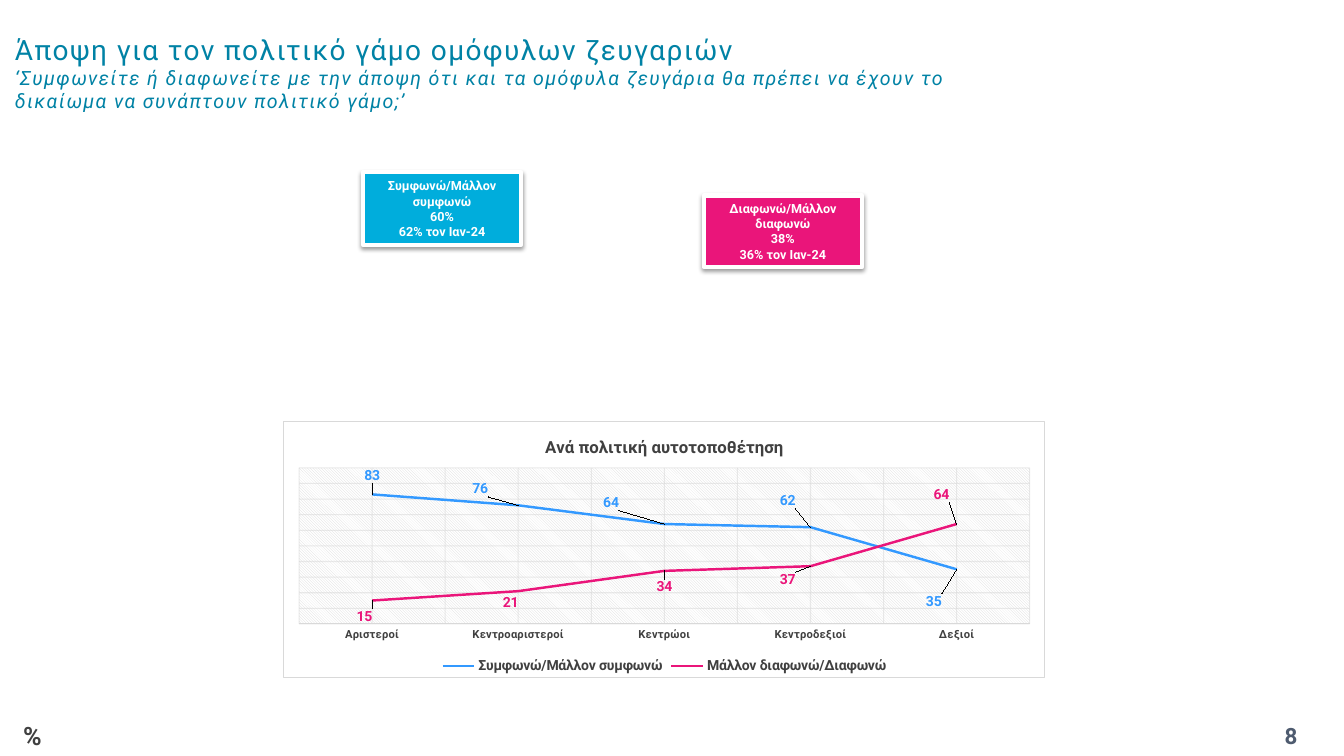
from copy import deepcopy

from lxml import etree
from pptx import Presentation
from pptx.chart.data import CategoryChartData
from pptx.dml.color import RGBColor
from pptx.enum.chart import XL_CHART_TYPE as ChartType
from pptx.enum.chart import XL_LABEL_POSITION as LabelPosition
from pptx.enum.chart import XL_LEGEND_POSITION as LegendPosition
from pptx.enum.chart import XL_MARKER_STYLE as Marker
from pptx.enum.chart import XL_TICK_MARK as TickMark
from pptx.enum.dml import MSO_PATTERN as Pattern
from pptx.enum.shapes import MSO_SHAPE as Shape
from pptx.enum.text import MSO_ANCHOR as Anchor
from pptx.enum.text import MSO_AUTO_SIZE as AutoSize
from pptx.enum.text import PP_ALIGN as Align
from pptx.oxml import parse_xml
from pptx.oxml.ns import nsdecls, qn
from pptx.util import Inches, Pt

FONT = "Roboto"
COLORS = {
    "title": "0082A5", "number": "4E5B6F", "dark": "404040", "gray": "808080",
    "grid": "D9D9D9", "white": "FFFFFF", "black": "000000",
    "cyan": "00ADDC", "blue": "3399FF", "pink": "EA157A",
}
CATEGORIES = ["Αριστεροί", "Κεντροαριστεροί", "Κεντρώοι", "Κεντροδεξιοί", "Δεξιοί"]
# Name, values, colour, label side, label shifts as fractions of the chart
SERIES = [
    ("Συμφωνώ/Μάλλον συμφωνώ", [83, 76, 64, 62, 35], "blue", LabelPosition.BELOW,
     [(0, -0.12), (-0.05, -0.11), (-0.07, -0.13), (-0.03, -0.15), (-0.03, 0.08)]),
    ("Μάλλον διαφωνώ/Διαφωνώ", [15, 21, 34, 37, 64], "pink", LabelPosition.ABOVE,
     [(-0.01, 0.11), (-0.01, 0.09), (0, 0.11), (-0.03, 0.1), (-0.02, -0.07)]),
]


def rgb(name):
    return RGBColor.from_string(COLORS[name])


def style_font(font, size, color, bold=False, italic=False):
    font.name, font.size = FONT, Pt(size)
    font.bold, font.italic = bold, italic
    font.color.rgb = rgb(color)


def add_span(para, text, size, color, bold=False, italic=False, spacing=0):
    span = para.add_run()
    span.text = text
    style_font(span.font, size, color, bold, italic)
    if spacing:
        span.font._element.set("spc", str(spacing * 100))
    return span


def add_text(page, place, anchor=Anchor.TOP, align=Align.LEFT):
    """Add a text box and return its first paragraph."""
    box = page.shapes.add_textbox(*map(Inches, place))
    box.text_frame.word_wrap = True
    box.text_frame.vertical_anchor = anchor
    para = box.text_frame.paragraphs[0]
    para.alignment = align
    return para


def add_card(page, place, color, lines):
    card = page.shapes.add_shape(Shape.RECTANGLE, *map(Inches, place))
    card.fill.solid()
    card.fill.fore_color.rgb = rgb(color)
    card.line.color.rgb = rgb("white")
    card.line.width = Pt(3)
    # Soft shadow straight below
    card.shadow.inherit = False
    effects = card._element.spPr.find(qn("a:effectLst"))
    effects.append(parse_xml(
        f'<a:outerShdw {nsdecls("a")} blurRad="{Pt(3.1)}" dist="{Pt(1.6)}" dir="5400000">'
        f'<a:srgbClr val="{COLORS["black"]}"><a:alpha val="38000"/></a:srgbClr>'
        '</a:outerShdw>'))
    frame = card.text_frame
    frame.word_wrap = True
    frame.auto_size = AutoSize.SHAPE_TO_FIT_TEXT
    frame.vertical_anchor = Anchor.MIDDLE
    for index, line in enumerate(lines):
        para = frame.add_paragraph() if index else frame.paragraphs[0]
        para.alignment = Align.CENTER
        add_span(para, line, 9, "white", bold=True)


def manual_layout(**values):
    """Build a chart layout element from positions and modes, in schema order."""
    layout = etree.Element(qn("c:layout"))
    manual = etree.SubElement(layout, qn("c:manualLayout"))
    for tag, value in values.items():
        etree.SubElement(manual, qn(f"c:{tag}")).set("val", str(value))
    return layout


def style_grid(gridlines):
    line = gridlines.format.line
    line.color.rgb = rgb("grid")
    line.width = Pt(0.75)
    color = gridlines.format._element if hasattr(gridlines.format, "_element") else None
    color = gridlines._xAx.find(qn("c:majorGridlines")) if color is None else color
    for tint in color.iter(qn("a:srgbClr")):
        etree.SubElement(tint, qn("a:alpha")).set("val", "54000")


def style_axes(chart):
    category, value = chart.category_axis, chart.value_axis
    category.major_tick_mark = category.minor_tick_mark = TickMark.NONE
    style_font(category.tick_labels.font, 8, "dark", bold=True)
    category.format.line.color.rgb = rgb("grid")
    category.format.line.width = Pt(0.75)
    value.minimum_scale, value.maximum_scale, value.major_unit = 0, 100, 10
    value.visible = False
    for axis in (category, value):
        axis.has_major_gridlines = True
        style_grid(axis.major_gridlines)
    # Category grid also runs through the points
    category.has_minor_gridlines = True
    major = category._element.find(qn("c:majorGridlines"))
    minor = category._element.find(qn("c:minorGridlines"))
    minor.append(deepcopy(major.find(qn("c:spPr"))))


def style_series(series, color, side, shifts):
    series.smooth = False
    series.marker.style = Marker.NONE
    series.format.line.color.rgb = rgb(color)
    series.format.line.width = Pt(1.75)
    labels = series.data_labels
    labels.show_value = True
    labels.number_format, labels.number_format_is_linked = "0", False
    labels.position = side
    style_font(labels.font, 10, color, bold=True)
    for index in range(len(shifts)):
        label = series.points[index].data_label
        label.position = side
        style_font(label.font, 10, color, bold=True)
    for element, (x, y) in zip(series._element.iter(qn("c:dLbl")), shifts):
        element.insert(1, manual_layout(x=x, y=y))


def style_backgrounds(chart):
    space = chart._chartSpace
    plot_area = space.chart.plotArea
    for layout in plot_area.findall(qn("c:layout")):
        plot_area.remove(layout)
    plot_area.insert(0, manual_layout(
        layoutTarget="inner", xMode="edge", yMode="edge", x=0.02, y=0.18, w=0.96, h=0.61))
    plot_area.append(parse_xml(
        f'<c:spPr {nsdecls("c", "a")}><a:pattFill prst="ltDnDiag">'
        f'<a:fgClr><a:srgbClr val="{COLORS["grid"]}"/></a:fgClr>'
        f'<a:bgClr><a:srgbClr val="{COLORS["white"]}"/></a:bgClr>'
        '</a:pattFill><a:ln><a:noFill/></a:ln></c:spPr>'))
    space.chart.addnext(parse_xml(
        f'<c:spPr {nsdecls("c", "a")}>'
        f'<a:solidFill><a:srgbClr val="{COLORS["white"]}"/></a:solidFill>'
        f'<a:ln w="{Pt(0.75)}"><a:solidFill><a:srgbClr val="{COLORS["grid"]}"/></a:solidFill>'
        '</a:ln></c:spPr>'))


def add_line_chart(page, place, title):
    data = CategoryChartData(number_format="0")
    data.categories = CATEGORIES
    for name, values, *_ in SERIES:
        data.add_series(name, values)
    chart = page.shapes.add_chart(ChartType.LINE, *map(Inches, place), data).chart
    style_font(chart.font, 10, "black")
    chart.has_title = True
    add_span(chart.chart_title.text_frame.paragraphs[0], title, 12, "dark", bold=True)
    chart.has_legend = True
    chart.legend.position = LegendPosition.BOTTOM
    chart.legend.include_in_layout = False
    style_font(chart.legend.font, 10, "dark", bold=True)
    chart.plots[0].vary_by_categories = False
    style_axes(chart)
    for series, (_, _, *look) in zip(chart.plots[0].series, SERIES):
        style_series(series, *look)
    style_backgrounds(chart)


def main():
    deck = Presentation()
    deck.slide_width, deck.slide_height = Inches(13.33), Inches(7.5)
    page = deck.slides.add_slide(deck.slide_layouts[6])

    # Title and survey question
    heading = add_text(page, (0.05, 0.13, 9.92, 1.18), Anchor.MIDDLE)
    add_span(heading, "Άποψη για τον πολιτικό γάμο ομόφυλων ζευγαριών", 20, "title", spacing=1)
    heading.add_line_break()
    add_span(heading, "‘Συμφωνείτε ή διαφωνείτε με την άποψη ότι και τα ομόφυλα ζευγάρια θα πρέπει "
             "να έχουν το δικαίωμα να συνάπτουν πολιτικό γάμο;’", 14, "title",
             italic=True, spacing=1)

    # Page number and unit
    number = add_text(page, (12.28, 7.1, 1.05, 0.4), Anchor.MIDDLE, Align.CENTER)
    add_span(number, "8", 16, "number", bold=True)
    unit = add_span(add_text(page, (0.13, 7.1, 0.71, 0.4)), "%", 18, "dark", bold=True)
    unit.font.fill.patterned()
    unit.font.fill.pattern = Pattern.DARK_UPWARD_DIAGONAL
    unit.font.fill.fore_color.rgb = rgb("gray")
    unit.font.fill.back_color.rgb = rgb("dark")

    # Chart and the two totals
    add_line_chart(page, (2.81, 4.18, 7.56, 2.55), "Ανά πολιτική αυτοτοποθέτηση")
    add_card(page, (3.6, 1.71, 1.57, 0.72), "cyan",
             ["Συμφωνώ/Μάλλον συμφωνώ", "60%", "62% τον Ιαν-24"])
    add_card(page, (6.98, 1.94, 1.57, 0.71), "pink",
             ["Διαφωνώ/Μάλλον διαφωνώ", "38%", "36% τον Ιαν-24"])
    deck.save("out.pptx")


if __name__ == "__main__":
    main()
